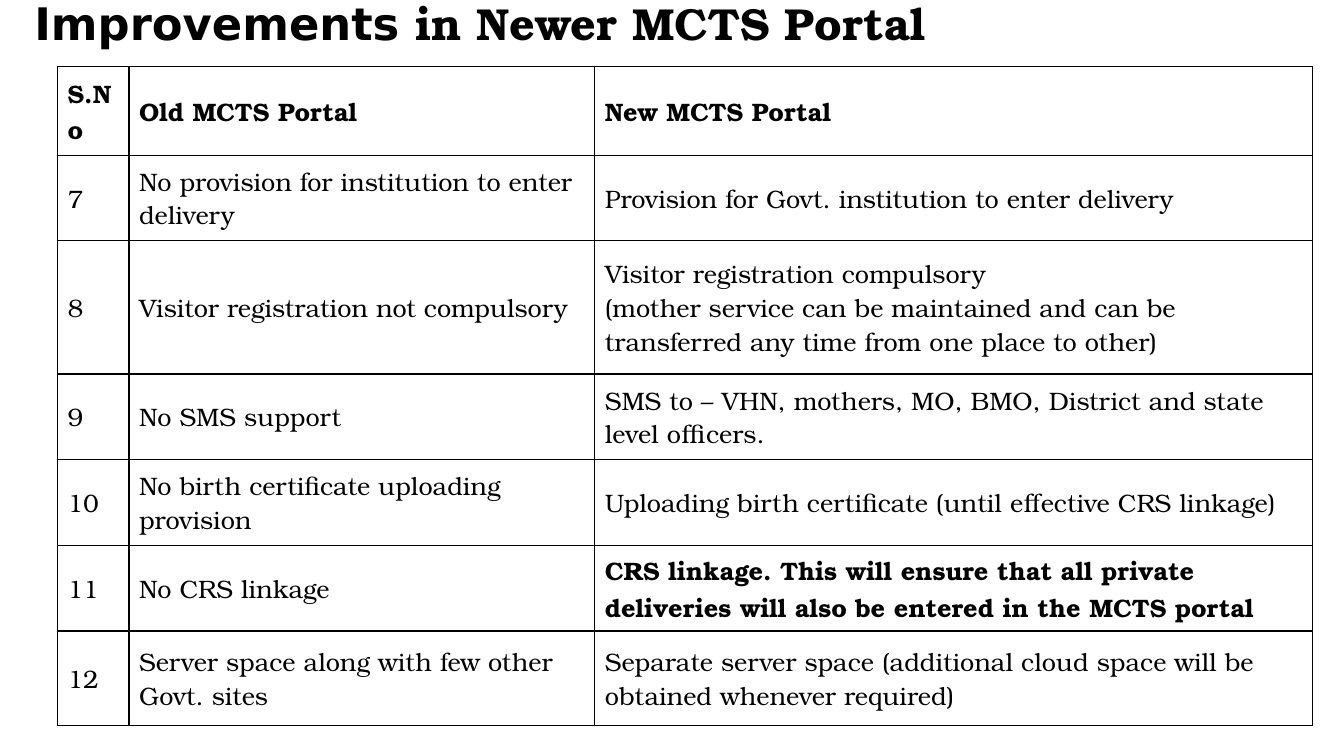
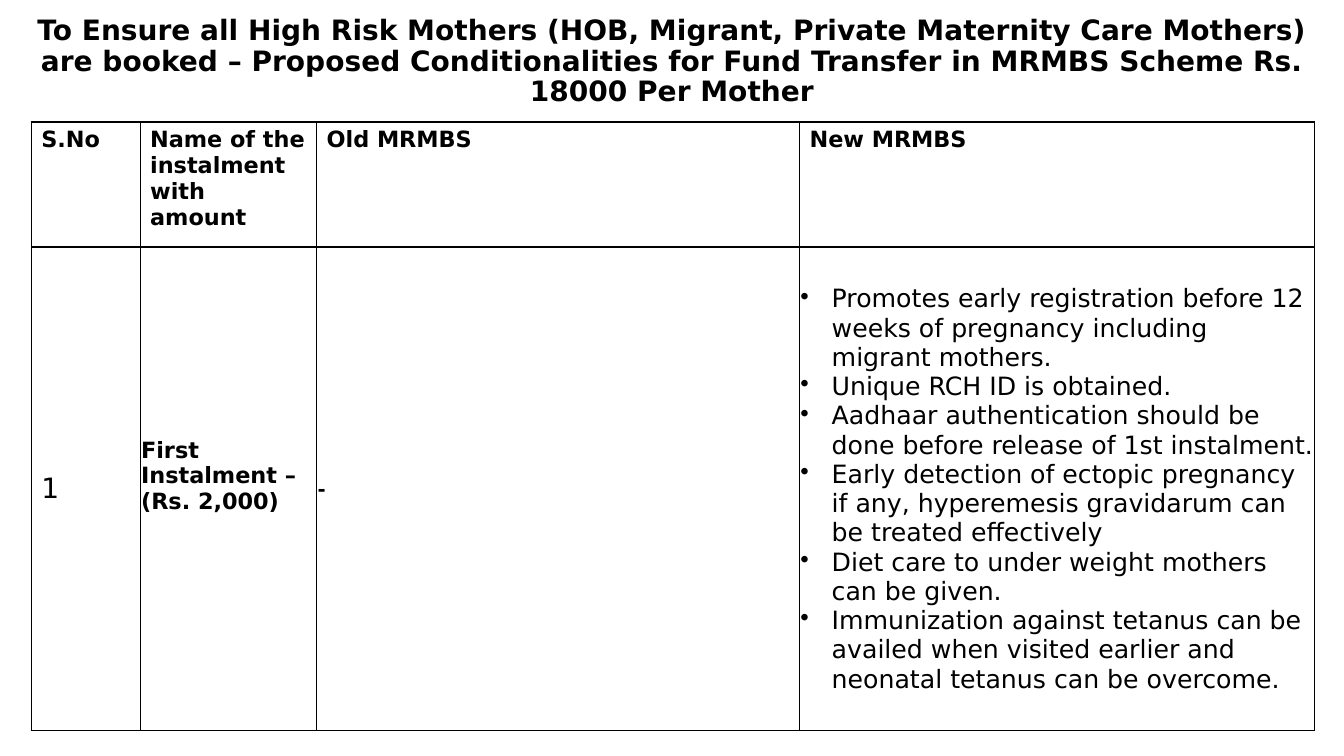
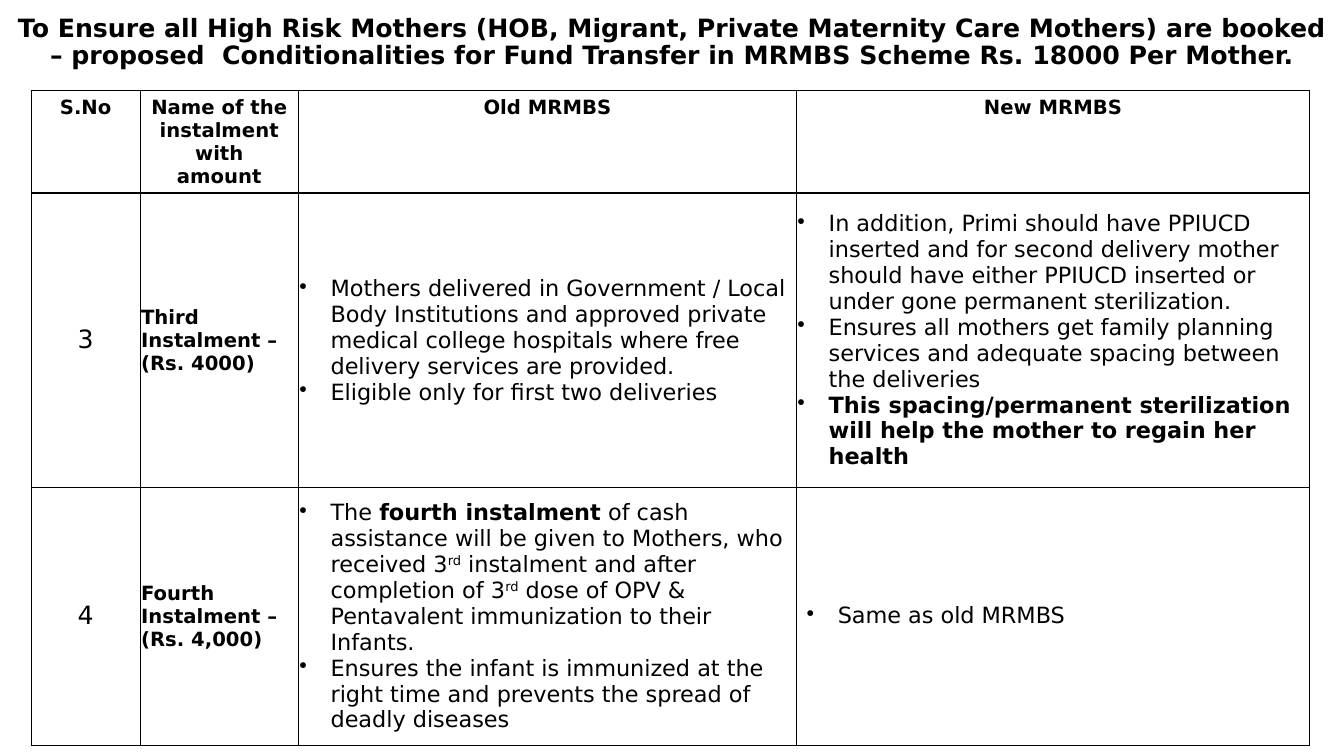
from lxml.etree import SubElement
from pptx import Presentation
from pptx.dml.color import RGBColor
from pptx.enum.text import MSO_ANCHOR, MSO_AUTO_SIZE, PP_ALIGN
from pptx.oxml.ns import qn
from pptx.util import Inches, Pt

BLACK = RGBColor(0, 0, 0)
SANS = "DejaVu Sans"
SERIF = "TeX Gyre Bonum"
SLIDE_WIDTH = 13.33
BULLET_INDENT = Inches(0.31)
BORDER_SIDES = ("a:lnL", "a:lnR", "a:lnT", "a:lnB")

deck = Presentation()
deck.slide_width, deck.slide_height = Inches(SLIDE_WIDTH), Inches(7.5)
title_only = deck.slide_layouts[5]


def write(frame, paragraphs, size, font=SANS, bold=False, align=PP_ALIGN.LEFT, bulleted=False):
    """Fill a text frame; a paragraph is a string or a list of (text, style) runs,
    where style is "", "bold" or "super"."""
    frame.text = "\n".join("" for _ in paragraphs)
    for paragraph, content in zip(frame.paragraphs, paragraphs):
        paragraph.alignment = align
        for text, style in [(content, "")] if isinstance(content, str) else content:
            run = paragraph.add_run()
            run.text = text
            run.font.name, run.font.size = font, Pt(size)
            run.font.bold = bold or style == "bold"
            run.font.color.rgb = BLACK
            if style == "super":
                run._r.get_or_add_rPr().set("baseline", "30000")
        if bulleted:
            properties = paragraph._p.get_or_add_pPr()
            properties.set("marL", str(BULLET_INDENT))
            properties.set("indent", str(-BULLET_INDENT))
            SubElement(properties, qn("a:buChar"), char="•")


def add_table_slide(title, title_box, title_size, title_align, corner, columns, rows):
    """Add a titled slide with an empty ruled table; return the title and the table."""
    slide = deck.slides.add_slide(title_only)
    heading = slide.shapes.title
    heading.left, heading.top, heading.width, heading.height = map(Inches, title_box)
    heading.text_frame.auto_size = MSO_AUTO_SIZE.NONE
    heading.text_frame.word_wrap = True
    heading.text_frame.vertical_anchor = MSO_ANCHOR.MIDDLE
    write(heading.text_frame, [title], title_size, bold=True, align=title_align)
    heading.text_frame.paragraphs[0].line_spacing = 0.9

    table = slide.shapes.add_table(
        len(rows), len(columns), *map(Inches, (*corner, sum(columns), sum(rows)))).table
    table.first_row = table.horz_banding = False
    for column, width in zip(table.columns, columns):
        column.width = Inches(width)
    for row, height in zip(table.rows, rows):
        row.height = Inches(height)
    for cell in table.iter_cells():
        cell.vertical_anchor = MSO_ANCHOR.MIDDLE
        cell.fill.background()
        for position, side in enumerate(BORDER_SIDES):
            border = SubElement(cell._tc.tcPr, qn(side), w=str(Pt(1)))
            line_fill = SubElement(border, qn("a:solidFill"))
            SubElement(line_fill, qn("a:srgbClr"), val=str(BLACK))
            cell._tc.tcPr.insert(position, border)
    return heading, table


# Portal improvements
portal_rows = [
    ("S.No", "Old MCTS Portal", ["New MCTS Portal"]),
    ("7", "No provision for institution to enter delivery",
     ["Provision for Govt. institution to enter delivery"]),
    ("8", "Visitor registration not compulsory",
     ["Visitor registration compulsory",
      "(mother service can be maintained and can be transferred any time from one place to other)"]),
    ("9", "No SMS support",
     ["SMS to – VHN, mothers, MO, BMO, District and state level officers."]),
    ("10", "No birth certificate uploading provision",
     ["Uploading birth certificate (until effective CRS linkage)"]),
    ("11", "No CRS linkage",
     [[("CRS linkage. This will ensure that all private deliveries will also be "
        "entered in the MCTS portal", "bold")]]),
    ("12", "Server space along with few other Govt. sites",
     ["Separate server space (additional cloud space will be obtained whenever required)"]),
]
heading, portal_table = add_table_slide(
    [("Improvements", ""), (" in Newer MCTS Portal", "")],
    (0.24, 0, 12.93, 0.52), 32, PP_ALIGN.LEFT,
    (0.57, 0.66), (0.71, 4.62, 7.12), (0.88, 0.85, 1.32, 0.85, 0.85, 0.85, 0.94))
heading.text_frame.paragraphs[0].runs[1].font.name = SERIF
for row_index, (number, old, new) in enumerate(portal_rows):
    for column_index, paragraphs in enumerate(([number], [old], new)):
        write(portal_table.cell(row_index, column_index).text_frame, paragraphs,
              18, SERIF, bold=row_index == 0)

# Instalment conditions: each instalment is (number, name, old conditions, new conditions)
instalment_headers = ("S.No", "Name of the instalment with amount", "Old MRMBS", "New MRMBS")
scheme_title = ("To Ensure all High Risk Mothers (HOB, Migrant, Private Maternity Care Mothers) "
                "are booked – {} Conditionalities for Fund Transfer in MRMBS Scheme "
                "Rs. 18000 Per Mother")
first_instalment = [
    ("1", "First Instalment – (Rs. 2,000)", "-", [
        "Promotes early registration before 12 weeks of pregnancy including migrant mothers.",
        "Unique RCH ID is obtained.",
        "Aadhaar authentication should be done before release of 1st instalment.",
        "Early detection of ectopic pregnancy if any, hyperemesis gravidarum can be "
        "treated effectively",
        "Diet care to under weight mothers can be given.",
        "Immunization against tetanus can be availed when visited earlier and neonatal "
        "tetanus can be overcome.",
    ]),
]
later_instalments = [
    ("3", "Third Instalment – (Rs. 4000)", [
        "Mothers delivered in Government / Local Body Institutions and approved private "
        "medical college hospitals where free delivery services are provided.",
        "Eligible only for first two deliveries",
    ], [
        "In addition, Primi should have PPIUCD inserted and for second delivery mother "
        "should have either PPIUCD inserted or under gone permanent sterilization.",
        "Ensures all mothers get family planning services and adequate spacing between "
        "the deliveries",
        [("This spacing/permanent sterilization will help the mother to regain her health",
          "bold")],
    ]),
    ("4", "Fourth Instalment – (Rs. 4,000)", [
        [("The ", ""), ("fourth instalment", "bold"),
         (" of cash assistance will be given to Mothers, who received 3", ""), ("rd", "super"),
         (" instalment and after completion of 3", ""), ("rd", "super"),
         (" dose of OPV & Pentavalent immunization to their Infants.", "")],
        "Ensures the infant is immunized at the right time and prevents the spread of "
        "deadly diseases",
    ], ["Same as old MRMBS"]),
]

_, first_table = add_table_slide(
    scheme_title.format("Proposed"), (0, 0.18, SLIDE_WIDTH, 0.87), 20, PP_ALIGN.CENTER,
    (0.31, 1.21), (1.08, 1.75, 4.79, 5.11), (1.24, 4.8))
_, later_table = add_table_slide(
    scheme_title.format("proposed ") + ".", (0, 0.11, SLIDE_WIDTH, 0.63), 18, PP_ALIGN.CENTER,
    (0.31, 0.9), (1.08, 1.57, 4.94, 5.09), (0.93, 2.92, 2.56))

for table, instalments, name_size, number_size, condition_size, align in (
        (first_table, first_instalment, 16, 20, 18, PP_ALIGN.LEFT),
        (later_table, later_instalments, 14, 18, 16, PP_ALIGN.CENTER)):
    for column_index, header in enumerate(instalment_headers):
        cell = table.cell(0, column_index)
        cell.vertical_anchor = MSO_ANCHOR.TOP
        write(cell.text_frame, [header], name_size, bold=True, align=align)
    for row_index, (number, name, *conditions) in enumerate(instalments, start=1):
        write(table.cell(row_index, 0).text_frame, [number], number_size, align=align)
        write(table.cell(row_index, 1).text_frame, [name], name_size, bold=True)
        for column_index, condition in enumerate(conditions, start=2):
            frame = table.cell(row_index, column_index).text_frame
            if condition == "-":
                write(frame, [condition], 14, bold=True)
            else:
                write(frame, condition, condition_size, bulleted=True)
        for column_index in (1, 2, 3):
            cell = table.cell(row_index, column_index)
            if conditions[1] != ["Same as old MRMBS"] or column_index < 3:
                cell.margin_left = cell.margin_top = cell.margin_right = Inches(0.01)
                cell.margin_bottom = 0
first_table.cell(1, 1).margin_bottom = Inches(0.26)

deck.save("out.pptx")
